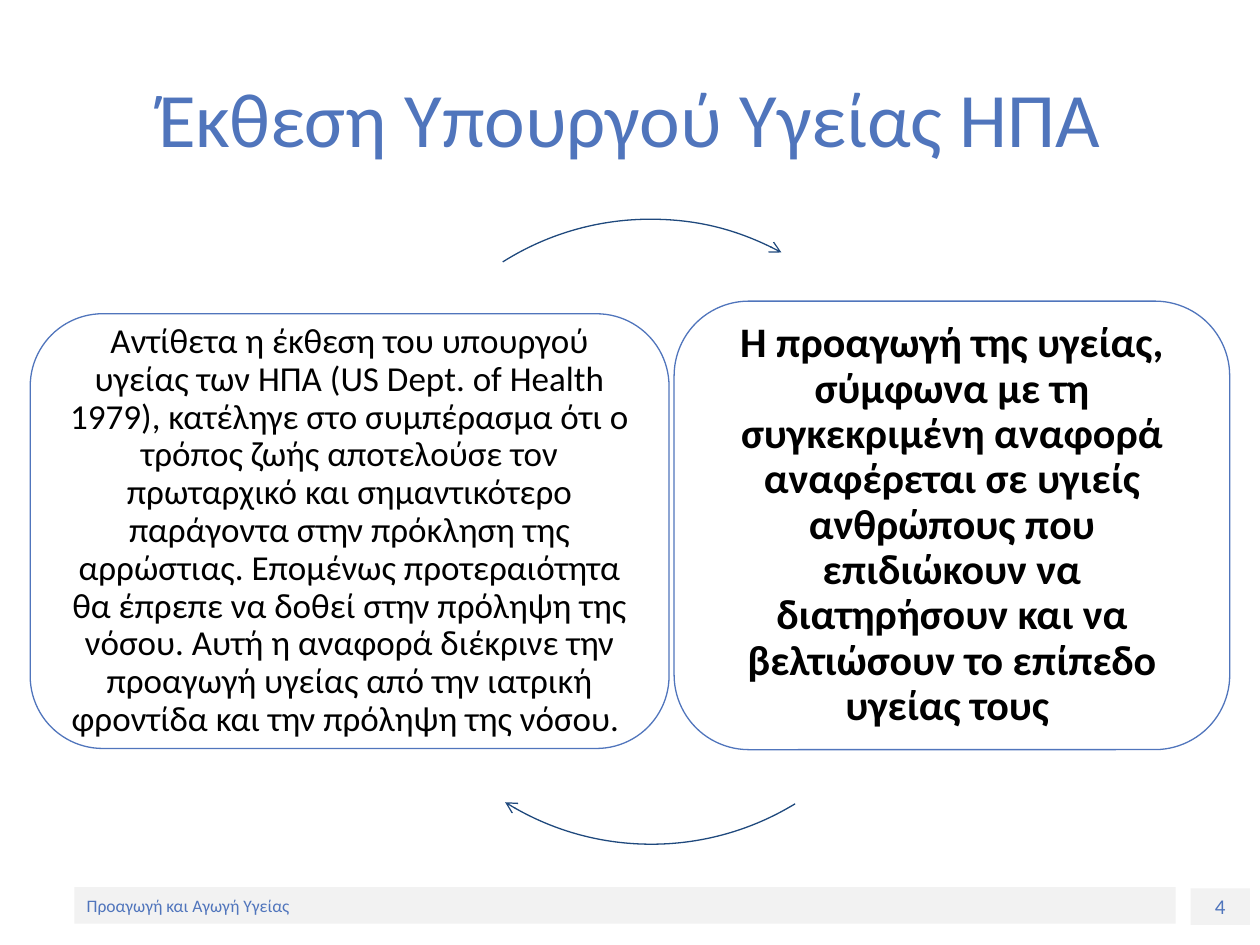
from pptx import Presentation
from pptx.dml.color import RGBColor
from pptx.enum.shapes import MSO_SHAPE as Kind
from pptx.enum.text import MSO_ANCHOR as Anchor, PP_ALIGN as Align
from pptx.oxml.ns import qn
from pptx.util import Inches, Pt
from lxml.etree import SubElement

BLUE = RGBColor(0x50, 0x75, 0xBC)
NAVY = RGBColor(0x1F, 0x49, 0x7D)
GREY = RGBColor(0xF2, 0xF2, 0xF2)
BLACK = RGBColor(0, 0, 0)
FACE = "Calibri"

# Content
TITLE = "Έκθεση Υπουργού Υγείας ΗΠΑ"
# box, text, size, bold, inset
CARDS = [
    ((0.24, 2.49, 5.07, 3.45),
     "Αντίθετα η έκθεση του υπουργού υγείας των ΗΠΑ (US Dept. of Health 1979), "
     "κατέληγε στο συμπέρασμα ότι ο τρόπος ζωής αποτελούσε τον πρωταρχικό και "
     "σημαντικότερο παράγοντα στην πρόκληση της αρρώστιας. Επομένως προτεραιότητα "
     "θα έπρεπε να δοθεί στην πρόληψη της νόσου. Αυτή η αναφορά διέκρινε την "
     "προαγωγή υγείας από την ιατρική φροντίδα και την πρόληψη της νόσου. ",
     20, False, 0.08),
    ((5.35, 2.39, 4.41, 3.56),
     "Η προαγωγή της υγείας, σύμφωνα με τη συγκεκριμένη αναφορά αναφέρεται σε "
     "υγιείς ανθρώπους που επιδιώκουν να διατηρήσουν και να βελτιώσουν το επίπεδο "
     "υγείας τους ",
     24, True, 0.1),
]
# left, top, start and end angle in degrees, clockwise from the right
ARCS = [(2.97, 1.74, 237.7, 298.4), (2.98, 2.32, 58.6, 122)]
ROUND = 4.38
# box, text, size, alignment
FOOT = [
    ((0.59, 7.04, 8.74, 0.29), "Προαγωγή και Αγωγή Υγείας", 10, Align.LEFT),
    ((9.45, 7.05, 0.47, 0.29), "4", 12, Align.CENTER),
]


def write(shape, text, size, color, align, bold=False):
    frame = shape.text_frame
    frame.text = text
    frame.word_wrap = True
    frame.vertical_anchor = Anchor.MIDDLE
    para = frame.paragraphs[0]
    para.alignment = align
    font = para.font
    font.name, font.size, font.bold = FACE, Pt(size), bold
    font.color.rgb = color
    return frame


def draw(slide, kind, box, line=None, fill=None):
    shape = slide.shapes.add_shape(kind, *map(Inches, box))
    shape.shadow.inherit = False
    if fill is None:
        shape.fill.background()
    else:
        shape.fill.solid()
        shape.fill.fore_color.rgb = fill
    if line is None:
        shape.line.fill.background()
    else:
        shape.line.color.rgb = line
        shape.line.width = Pt(0.75)
    return shape


def main():
    deck = Presentation()
    deck.slide_width, deck.slide_height = Inches(10), Inches(7.5)
    slide = deck.slides.add_slide(deck.slide_layouts[5])

    # Footer bars
    for box, text, size, align in FOOT:
        bar = draw(slide, Kind.RECTANGLE, box, fill=GREY)
        write(bar, text, size, BLUE, align)

    # Title
    head = slide.shapes.title
    head.left, head.top = Inches(0.5), Inches(0.3)
    head.width, head.height = Inches(9), Inches(1.25)
    write(head, TITLE, 44, BLUE, Align.CENTER)

    # Text cards
    for box, text, size, bold, inset in CARDS:
        card = draw(slide, Kind.ROUNDED_RECTANGLE, box, line=BLUE)
        frame = write(card, text, size, BLACK, Align.CENTER, bold)
        frame.margin_left = frame.margin_right = Inches(inset)
        frame.margin_top = frame.margin_bottom = Inches(inset)
        frame.paragraphs[0].line_spacing = 0.9

    # Cycle arrows: an angle is stored as 60000ths of a degree over 100000
    for left, top, start, end in ARCS:
        arc = draw(slide, Kind.ARC, (left, top, ROUND, ROUND), line=NAVY)
        arc.adjustments[0] = start * 0.6
        arc.adjustments[1] = end * 0.6
        SubElement(arc.line._get_or_add_ln(), qn("a:tailEnd"), type="arrow")

    deck.save("out.pptx")


if __name__ == "__main__":
    main()
